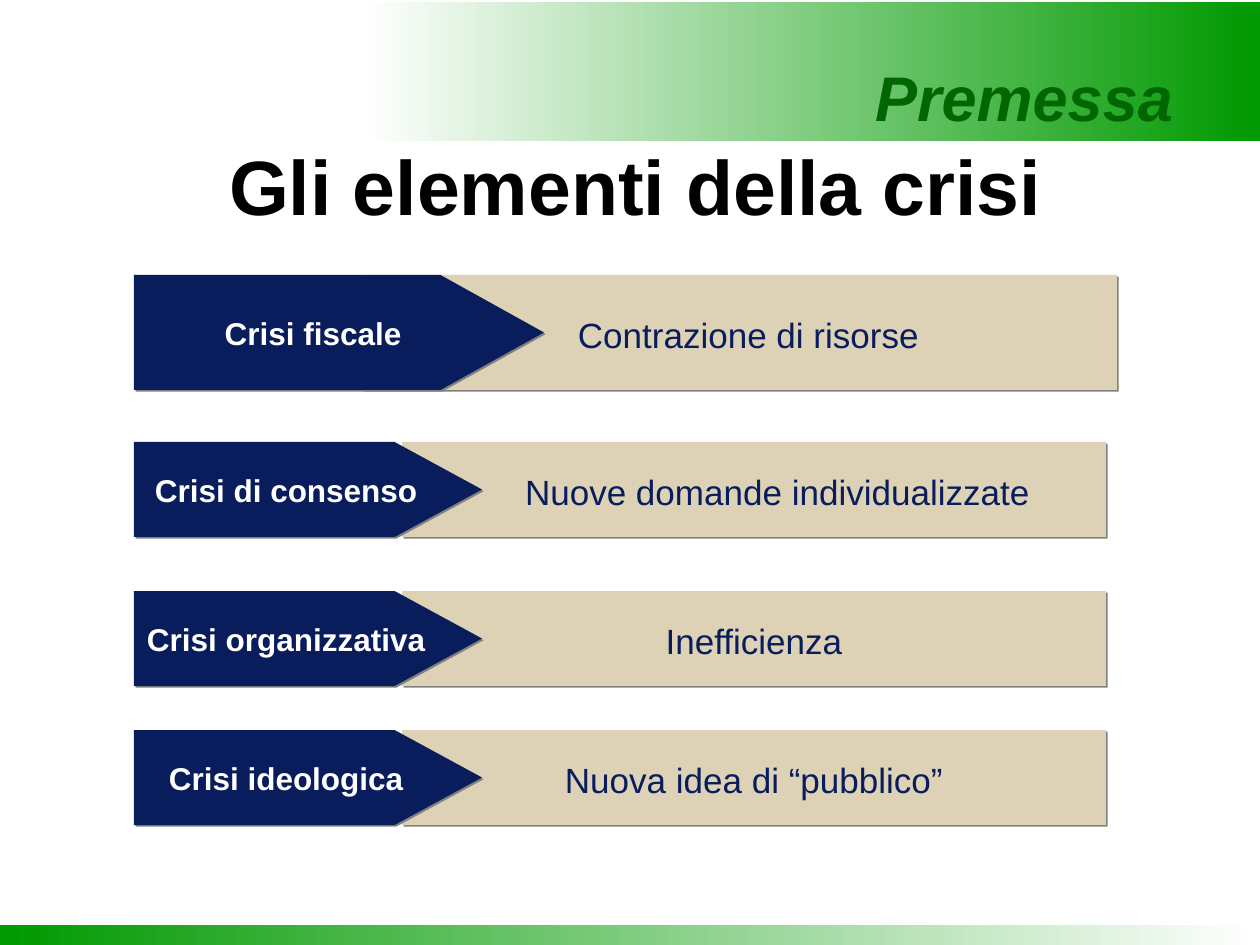
from lxml import etree
from pptx import Presentation
from pptx.dml.color import RGBColor
from pptx.enum.shapes import MSO_SHAPE
from pptx.enum.text import MSO_ANCHOR, MSO_AUTO_SIZE, PP_ALIGN
from pptx.oxml.ns import qn
from pptx.util import Pt

EMU_PER_PX = 914400 // 126
RECTANGLE, PENTAGON = MSO_SHAPE.RECTANGLE, MSO_SHAPE.PENTAGON
TOP, MIDDLE = MSO_ANCHOR.TOP, MSO_ANCHOR.MIDDLE
CENTER, RIGHT = PP_ALIGN.CENTER, PP_ALIGN.RIGHT
NO_AUTOFIT = MSO_AUTO_SIZE.NONE

WHITE = RGBColor(0xFF, 0xFF, 0xFF)
BLACK = RGBColor(0x00, 0x00, 0x00)
GREEN = RGBColor(0x00, 0x99, 0x00)
DARK_GREEN = RGBColor(0x00, 0x66, 0x00)
NAVY = RGBColor(0x09, 0x1D, 0x5D)
SAND = RGBColor(0xDD, 0xD2, 0xB5)
SHADOW_GREY = "808080"

ARROW_LEFT = 134
WIDE_ROW = {"bar_left": 362, "bar_width": 755, "arrow_width": 410, "height": 115, "point": 0.9}
ROW = {"bar_left": 402, "bar_width": 704, "arrow_width": 348, "height": 95, "point": 0.92}
CRISES = [
    ("Crisi fiscale", "Contrazione di risorse", 275, 18, WIDE_ROW),
    ("Crisi di consenso", "Nuove domande individualizzate", 442, 47, ROW),
    ("Crisi organizzativa", "Inefficienza", 591, 0, ROW),
    ("Crisi ideologica", "Nuova idea di “pubblico”", 730, 0, ROW),
]


def px(*lengths):
    """Convert pixel lengths to a list of EMU."""
    return [length * EMU_PER_PX for length in lengths]


def write_text(shape, text, *, size, color, bold=False, italic=False, align=CENTER,
               anchor=MIDDLE, insets=(13, 13, 13, 13), line_spacing=1.0):
    """Fill a shape with one formatted paragraph; insets run left, top, right, bottom."""
    frame = shape.text_frame
    frame.word_wrap = True
    frame.auto_size = NO_AUTOFIT
    frame.vertical_anchor = anchor
    (frame.margin_left, frame.margin_top,
     frame.margin_right, frame.margin_bottom) = px(*insets)
    paragraph = frame.paragraphs[0]
    paragraph.alignment = align
    paragraph.line_spacing = line_spacing
    run = paragraph.add_run()
    run.text = text
    font = run.font
    font.name, font.size, font.bold, font.italic = "Arial", Pt(size), bold, italic
    font.color.rgb = color


def add_plain_shape(slide, kind, left, top, width, height):
    """Add a preset shape without outline or theme shadow."""
    shape = slide.shapes.add_shape(kind, *px(left, top, width, height))
    shape.shadow.inherit = False
    shape.line.fill.background()
    return shape


def add_gradient_band(slide, left, top, width, height, rotation=0):
    """Add a band that fades from white to green."""
    band = add_plain_shape(slide, RECTANGLE, left, top, width, height)
    band.rotation = rotation
    band.fill.gradient()
    band.fill.gradient_angle = 0
    for stop, color in zip(band.fill.gradient_stops, (WHITE, GREEN)):
        stop.color.rgb = color


def add_shadowed_shape(slide, kind, left, top, width, height, color):
    """Add a filled shape with a thin hard grey shadow."""
    shape = add_plain_shape(slide, kind, left, top, width, height)
    shape.fill.solid()
    shape.fill.fore_color.rgb = color
    effects = shape._element.spPr.find(qn("a:effectLst"))
    shadow = etree.SubElement(effects, qn("a:outerShdw"), dist=str(Pt(1.4)),
                              dir="2700000", algn="ctr", rotWithShape="0")
    etree.SubElement(shadow, qn("a:srgbClr"), val=SHADOW_GREY)
    return shape


def add_bar(slide, text, top, indent, row):
    """Add the sand bar that explains a crisis."""
    bar = add_shadowed_shape(slide, RECTANGLE, row["bar_left"], top,
                             row["bar_width"], row["height"], SAND)
    write_text(bar, text, size=20, color=NAVY, line_spacing=1.1,
               insets=(13 + indent, 13, 13, 13))


def add_arrow(slide, text, top, row):
    """Add the navy arrow that names a crisis."""
    arrow = add_shadowed_shape(slide, PENTAGON, ARROW_LEFT, top,
                               row["arrow_width"], row["height"], NAVY)
    arrow.adjustments[0] = row["point"]
    write_text(arrow, text, size=18, color=WHITE, bold=True)


def add_heading(slide):
    """Add the section name and place the slide title."""
    section = slide.shapes.add_textbox(*px(272, 45, 922, 88))
    write_text(section, "Premessa", size=36, color=DARK_GREEN, bold=True, italic=True,
               align=RIGHT, anchor=TOP, insets=(13, 14, 21, 6))
    title = slide.shapes.title
    title.left, title.top, title.width, title.height = px(74, 125, 1124, 136)
    write_text(title, "Gli elementi della crisi", size=44, color=BLACK, bold=True,
               anchor=TOP, insets=(13, 14, 13, 6))


def main():
    """Build the slide and save it."""
    presentation = Presentation()
    presentation.slide_width, presentation.slide_height = px(1260, 945)
    slide = presentation.slides.add_slide(presentation.slide_layouts[5])
    add_gradient_band(slide, 364, 2, 896, 139)
    add_gradient_band(slide, 0, 925, 1258, 20, rotation=180)
    add_heading(slide)
    for name, effect, top, indent, row in CRISES:
        add_bar(slide, effect, top, indent, row)
        add_arrow(slide, name, top, row)
    presentation.save("out.pptx")


if __name__ == "__main__":
    main()
